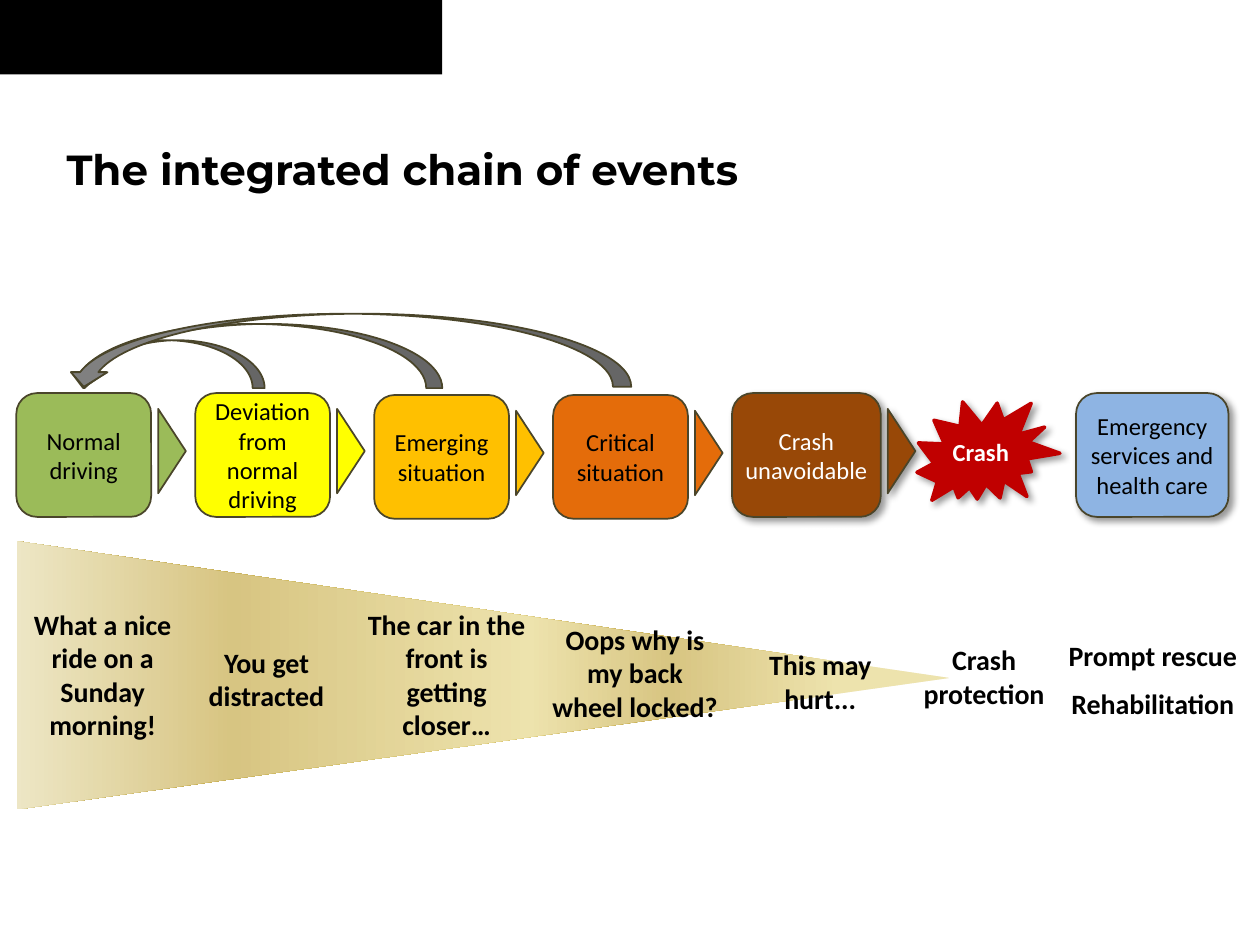
from lxml.etree import SubElement
from pptx import Presentation
from pptx.dml.color import RGBColor
from pptx.enum.shapes import MSO_SHAPE as Kind
from pptx.enum.text import MSO_ANCHOR, PP_ALIGN
from pptx.oxml.ns import qn
from pptx.util import Inches, Pt

WIDE, HIGH = Inches(10), Inches(7.5)
LEFT, STEP, TOP, TALL = 1.3, 14.2, 41.6, 13.1
EDGE = "4A452A"

BODY = {"name": "Calibri", "size": Pt(14), "bold": False}
NOTE = {"name": "Calibri", "size": Pt(16), "bold": True}
HEAD = {"name": "Montserrat", "size": Pt(24), "bold": True}
CALL = BODY | {"bold": True}

# label, fill, text colour, box width, drop, shadow
STAGES = [
    ("Normal driving", "9BBB59", "000000", 10.7, 0, False),
    ("Deviation from normal driving", "FFFF00", "000000", 10.7, 0, False),
    ("Emerging situation", "FFC000", "000000", 10.7, 0.2, False),
    ("Critical situation", "E46C0A", "000000", 10.7, 0.2, False),
    ("Crash unavoidable", "984807", "FFFFFF", 11.8, 0, True),
]
# place and adjustments of the arrow back from each stage
BACKS = {
    1: ((6, 36, 15, 5.07), (0.25, 0.37, 0.25)),
    2: ((5.2, 34.27, 29.9, 6.8), (0.25, 0.55, 0.25)),
    3: ((5.2, 33.2, 44.9, 7.73), (0.25, 0.5, 0.2)),
}
NOTES = [
    ((1.6, 63.6, 13.1, 15.73), ["What a nice ride on a Sunday morning!"]),
    ((15.4, 67.6, 11.5, 8.53), ["You get distracted"]),
    ((28.1, 63.6, 14.7, 15.73), ["The car in the front is getting closer…"]),
    ((42.8, 65.2, 15.2, 12.13), ["Oops why is my back wheel locked?"]),
    ((59, 67.87, 12.2, 8.53), ["This may hurt..."]),
    ((72, 67.33, 12.2, 8.53), ["Crash protection"]),
    ((80.5, 66.93, 22, 10.27), ["Prompt rescue", "Rehabilitation"]),
]
WEDGE = (27.7, 22.13, 21.3, 98.67)
STOPS = [(12, "E6D78A"), (30, "C7AC4C"), (45, "E6D78A"),
         (77, "C7AC4C"), (100, "E6DCAC")]


def tint(code):
    return RGBColor.from_string(code)


def span(x, y, w, h):
    """Turn percentages of the slide into lengths."""
    return [int(part * full / 100)
            for part, full in zip((x, y, w, h), (WIDE, HIGH) * 2)]


def node(up, tag, **values):
    return SubElement(up, qn(tag), {key: str(val) for key, val in values.items()})


def write(shape, lines, style, color, align=PP_ALIGN.CENTER,
          anchor=MSO_ANCHOR.MIDDLE, side=0.1):
    frame = shape.text_frame
    form = {"word_wrap": True, "vertical_anchor": anchor,
            "margin_left": Inches(side), "margin_right": Inches(side)}
    for key, val in form.items():
        setattr(frame, key, val)
    for rank, line in enumerate(lines):
        para = frame.add_paragraph() if rank else frame.paragraphs[0]
        para.text, para.alignment = line, align
        if rank:
            para.space_before = Pt(8)
        for key, val in style.items():
            setattr(para.font, key, val)
        para.font.color.rgb = tint(color)


def draw(slide, kind, place, fill=None, line=None, width=1, turn=0,
         adjust=(), shade=False):
    shape = slide.shapes.add_shape(kind, *span(*place))
    shape.rotation = turn
    shape.shadow.inherit = False
    for rank, val in enumerate(adjust):
        shape.adjustments[rank] = val
    if fill:
        shape.fill.solid()
        shape.fill.fore_color.rgb = tint(fill)
    if line:
        shape.line.color.rgb = tint(line)
        shape.line.width = Pt(width)
    else:
        shape.line.fill.background()
    if shade:
        cast(shape)
    return shape


def cast(shape):
    """Add a soft shadow to the lower right."""
    effects = shape._element.spPr.find(qn("a:effectLst"))
    outer = node(effects, "a:outerShdw", blurRad=Pt(4), dist=Pt(3),
                 dir=45 * 60000, algn="tl", rotWithShape=0)
    node(node(outer, "a:srgbClr", val="000000"), "a:alpha", val=40000)


def blend(shape):
    """Fill along the shape's own height with the wedge colours."""
    shape.fill.gradient()
    grad = shape._element.spPr.find(qn("a:gradFill"))
    for part in list(grad):
        grad.remove(part)
    stops = node(grad, "a:gsLst")
    for pos, code in STOPS:
        node(node(stops, "a:gs", pos=pos * 1000), "a:srgbClr", val=code)
    node(grad, "a:lin", ang=90 * 60000, scaled=0)


def text(slide, place, lines, style, color="000000", **form):
    write(slide.shapes.add_textbox(*span(*place)), lines, style, color, **form)


def note(slide, rank):
    place, lines = NOTES[rank]
    text(slide, place, lines, NOTE, anchor=MSO_ANCHOR.TOP)


def box(slide, place, label, fill, color="000000", shade=False):
    shape = draw(slide, Kind.ROUNDED_RECTANGLE, place, fill, EDGE, shade=shade)
    write(shape, [label], BODY, color, side=0.04 if shade else 0.1)


def stage(slide, rank):
    label, fill, color, wide, drop, shade = STAGES[rank]
    x, y = LEFT + rank * STEP, TOP + drop
    box(slide, (x, y, wide, TALL), label, fill, color, shade)
    mid = x + wide + 1.65
    draw(slide, Kind.ISOSCELES_TRIANGLE, (mid - 3.35, y + 4.67, 6.7, 2.93),
         fill, EDGE, turn=90, shade=shade)
    if rank in BACKS:
        place, adjust = BACKS[rank]
        draw(slide, Kind.CURVED_UP_ARROW, place, "808080", EDGE,
             turn=180, adjust=adjust)


def wedge(slide):
    return draw(slide, Kind.ISOSCELES_TRIANGLE, WEDGE, turn=90, adjust=[0.51])


def veil(slide):
    """Lighten the wedge with a thin white layer."""
    shape = wedge(slide)
    shape.fill.solid()
    shape.fill.fore_color.rgb = tint("FFFFFF")
    color = shape._element.spPr.find(qn("a:solidFill"))[0]
    node(color, "a:alpha", val=30000)


def crash(slide):
    draw(slide, Kind.EXPLOSION2, (72.9, 41.47, 10.9, TALL), "C00000",
         "C00000", width=2, turn=18.8, shade=True)
    text(slide, (74, 45.6, 7.7, 4.53), ["Crash"], CALL, "FFFFFF",
         anchor=MSO_ANCHOR.TOP)


def main():
    deck = Presentation()
    deck.slide_width, deck.slide_height = WIDE, HIGH
    slide = deck.slides.add_slide(deck.slide_layouts[6])
    draw(slide, Kind.RECTANGLE, (0, 0, 35.1, 7.87), "000000")
    text(slide, (4.3, 12.27, 95.7, 11.07), ["The integrated chain of events"],
         HEAD, align=PP_ALIGN.LEFT)
    blend(wedge(slide))
    veil(slide)
    for rank in range(len(STAGES)):
        stage(slide, rank)
        note(slide, rank)
    crash(slide)
    note(slide, 5)
    box(slide, (85.4, TOP, 12.1, TALL), "Emergency services and health care",
        "8EB4E3", shade=True)
    note(slide, 6)
    deck.save("out.pptx")


if __name__ == "__main__":
    main()
